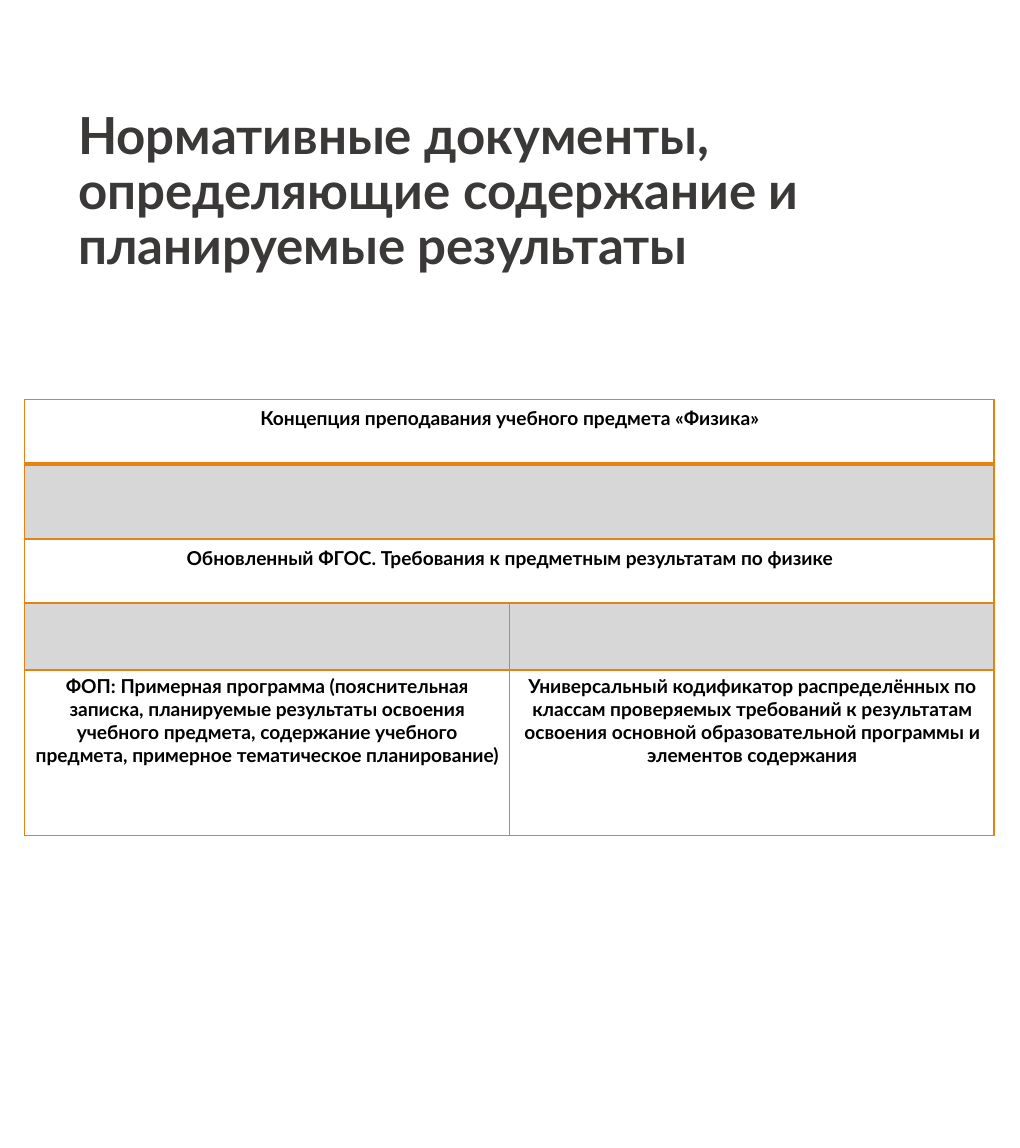
from lxml.etree import SubElement
from pptx import Presentation
from pptx.dml.color import RGBColor as RGB
from pptx.enum.text import MSO_ANCHOR as ANCHOR, MSO_AUTO_SIZE as AUTO, PP_ALIGN as ALIGN
from pptx.oxml.ns import qn
from pptx.util import Inches, Pt

COLORS = {"title": "3B3838", "text": "000000", "border": "E48312", "band": "3B3838"}
FONT = "Lato"
COLS = [3.17, 3.17]
ROWS = [0.42, 0.49, 0.42, 0.44, 1.08]
MERGED_ROWS = (0, 1, 2)
BAND_ROWS = (1, 3)
DETAIL_ROW = 4
TEXTS = {
    (0, 0): "Концепция преподавания учебного предмета «Физика»",
    (2, 0): "Обновленный ФГОС. Требования к предметным результатам по физике",
    (4, 0): "ФОП: Примерная программа (пояснительная записка, планируемые результаты "
            "освоения учебного предмета, содержание учебного предмета, примерное "
            "тематическое планирование)",
    (4, 1): "Универсальный кодификатор распределённых по классам проверяемых требований "
            "к результатам освоения основной образовательной программы и элементов "
            "содержания",
}


def style_text(p, size, color, align):
    """Format a paragraph and its runs in the bold slide font."""
    p.alignment = align
    for font in [p.font] + [r.font for r in p.runs]:
        font.name, font.size, font.bold = FONT, Pt(size), True
        font.color.rgb = RGB.from_string(COLORS[color])


def set_borders(cell, row):
    """Outline a cell, with a thicker rule under the first row."""
    widths = {"L": 1, "R": 1, "T": 2 if row == 1 else 1, "B": 2 if row == 0 else 1}
    tcPr = cell._tc.get_or_add_tcPr()
    for side, width in widths.items():
        ln = SubElement(tcPr, qn(f"a:ln{side}"), w=str(Pt(width)))
        fill = SubElement(ln, qn("a:solidFill"))
        SubElement(fill, qn("a:srgbClr"), val=COLORS["border"])


def fill_cell(cell, row):
    """Give band rows a translucent fill and leave other rows clear."""
    if row not in BAND_ROWS:
        cell.fill.background()
        return
    cell.fill.solid()
    cell.fill.fore_color.rgb = RGB.from_string(COLORS["band"])
    color = cell._tc.tcPr.find(qn("a:solidFill")).find(qn("a:srgbClr"))
    SubElement(color, qn("a:alpha"), val="20000")


def add_title(s, box):
    """Place the slide title in the given box."""
    sp = s.shapes.title
    sp.left, sp.top, sp.width, sp.height = map(Inches, box)
    tf = sp.text_frame
    tf.text = "Нормативные документы, определяющие содержание и планируемые результаты"
    tf.word_wrap, tf.auto_size = True, AUTO.NONE
    tf.vertical_anchor = ANCHOR.TOP
    p = tf.paragraphs[0]
    p.line_spacing, p.space_before = 0.9, Pt(0)
    style_text(p, 24, "title", ALIGN.LEFT)


def add_documents(s, left, top):
    """Build the table of documents from its top left corner."""
    box = map(Inches, (left, top, sum(COLS), sum(ROWS)))
    table = s.shapes.add_table(len(ROWS), len(COLS), *box).table
    table.first_row = table.horz_banding = False
    for col, width in zip(table.columns, COLS):
        col.width = Inches(width)
    for i, height in enumerate(ROWS):
        table.rows[i].height = Inches(height)
        if i in MERGED_ROWS:
            table.cell(i, 0).merge(table.cell(i, len(COLS) - 1))
        dx, dy = (0.06, 0.03) if i == DETAIL_ROW else (0.1, 0.05)
        for j in range(len(COLS)):
            cell = table.cell(i, j)
            cell.margin_left = cell.margin_right = Inches(dx)
            cell.margin_top = cell.margin_bottom = Inches(dy)
            set_borders(cell, i)
            fill_cell(cell, i)
            cell.text_frame.text = TEXTS.get((i, j), "")
            style_text(cell.text_frame.paragraphs[0], 9, "text", ALIGN.CENTER)


def main():
    """Create the presentation and save it."""
    prs = Presentation()
    prs.slide_width, prs.slide_height = Pt(480), Pt(540)
    s = prs.slides.add_slide(prs.slide_layouts[5])
    add_title(s, (0.41, 0.67, 5.67, 1.27))
    add_documents(s, 0.16, 2.61)
    prs.save("out.pptx")


if __name__ == "__main__":
    main()
